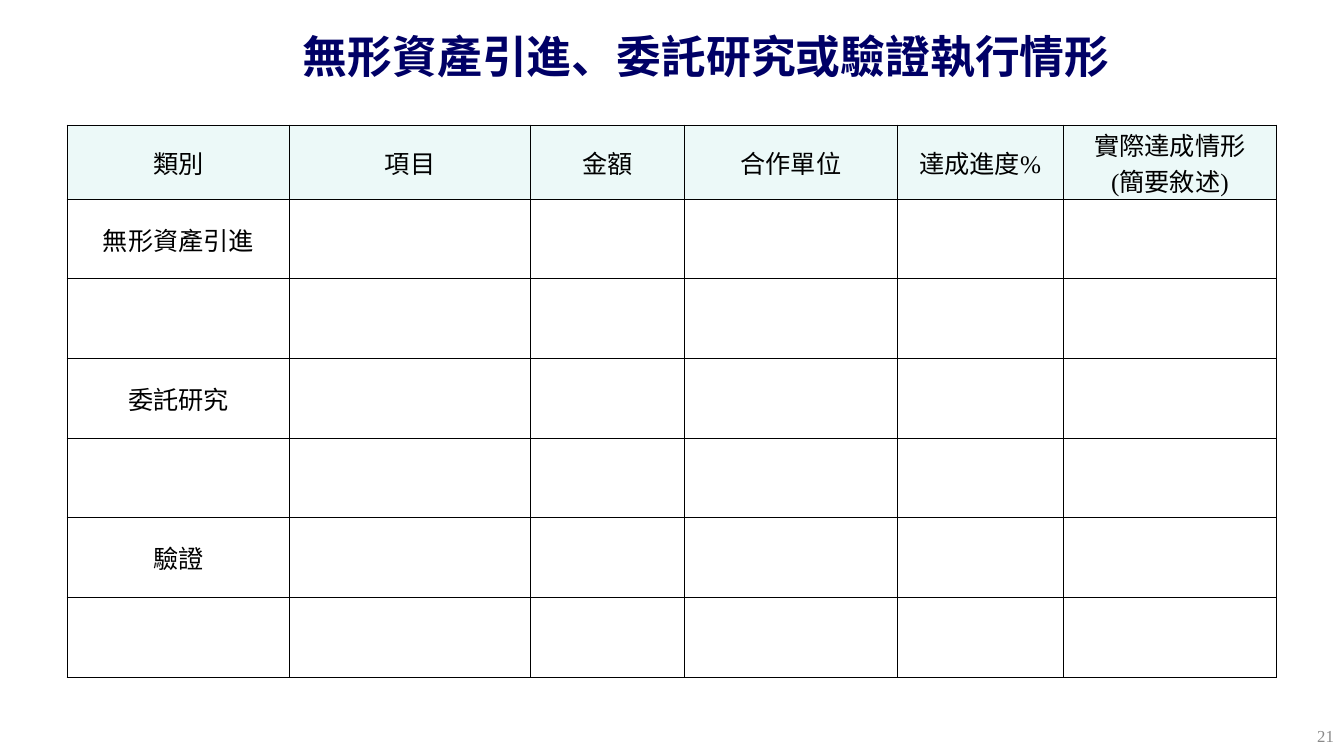
from lxml.etree import SubElement
from pptx import Presentation
from pptx.dml.color import RGBColor
from pptx.enum.text import MSO_ANCHOR, MSO_AUTO_SIZE, PP_ALIGN
from pptx.oxml.ns import qn
from pptx.util import Pt

THEME = {
    "font": "Times New Roman",
    "title": {"size": Pt(32), "bold": True, "color": "000066"},
    "table": {"size": Pt(18), "bold": False, "color": "000000"},
    "page": {"size": Pt(12), "bold": False, "color": "898989"},
    "header_fill": "ECF9F8",
    "body_fill": "FFFFFF",
    "border": "000000",
}


def write(frame, text, style, align):
    frame.text = text
    for paragraph in frame.paragraphs:
        paragraph.alignment = align
        paragraph.font.name = THEME["font"]
        paragraph.font.color.rgb = RGBColor.from_string(THEME[style]["color"])
        for key in ("size", "bold"):
            setattr(paragraph.font, key, THEME[style][key])


def add_borders(cell):
    properties = cell._tc.get_or_add_tcPr()
    for side in ("lnL", "lnR", "lnT", "lnB"):
        line = SubElement(properties, qn(f"a:{side}"), w=str(Pt(1)))
        fill = SubElement(line, qn("a:solidFill"))
        SubElement(fill, qn("a:srgbClr"), val=THEME["border"])


deck = Presentation()
deck.slide_width, deck.slide_height = Pt(960), Pt(540)
slide = deck.slides.add_slide(deck.slide_layouts[5])

heading = slide.shapes.title
heading_place = {"left": Pt(72.7), "top": Pt(11.5), "width": Pt(864), "height": Pt(57)}
for key, value in heading_place.items():
    setattr(heading, key, value)
write(heading.text_frame, "無形資產引進、委託研究或驗證執行情形", "title", PP_ALIGN.CENTER)

page_number = slide.shapes.add_textbox(Pt(736), Pt(511.2), Pt(224), Pt(28.8))
write(page_number.text_frame, "21", "page", PP_ALIGN.RIGHT)

frame_format = {
    "auto_size": MSO_AUTO_SIZE.NONE,
    "word_wrap": True,
    "vertical_anchor": MSO_ANCHOR.MIDDLE,
}
for frame in (heading.text_frame, page_number.text_frame):
    for key, value in frame_format.items():
        setattr(frame, key, value)

headers = ["類別", "項目", "金額", "合作單位", "達成進度%", "實際達成情形\n(簡要敘述)"]
categories = ["無形資產引進", "", "委託研究", "", "驗證", ""]
rows = [headers] + [[category] + [""] * 5 for category in categories]
column_widths = [159, 172, 110, 152, 118.5, 152.5]
row_heights = [52] + [56.9] * len(categories)

progress = slide.shapes.add_table(
    len(rows), len(headers), Pt(48), Pt(89.5), Pt(sum(column_widths)), Pt(sum(row_heights))
).table
for column, width in zip(progress.columns, column_widths):
    column.width = Pt(width)
for row, height in zip(progress.rows, row_heights):
    row.height = Pt(height)

header_margins = {
    "margin_left": Pt(0.7),
    "margin_right": Pt(0.7),
    "margin_top": Pt(0.7),
    "margin_bottom": Pt(0),
}
for row_index, texts in enumerate(rows):
    for column_index, text in enumerate(texts):
        cell = progress.cell(row_index, column_index)
        add_borders(cell)
        cell.fill.solid()
        fill_name = "body_fill" if row_index else "header_fill"
        cell.fill.fore_color.rgb = RGBColor.from_string(THEME[fill_name])
        cell.vertical_anchor = MSO_ANCHOR.MIDDLE
        write(cell.text_frame, text, "table", PP_ALIGN.CENTER)
        if row_index == 0:
            for key, value in header_margins.items():
                setattr(cell, key, value)

deck.save("out.pptx")
